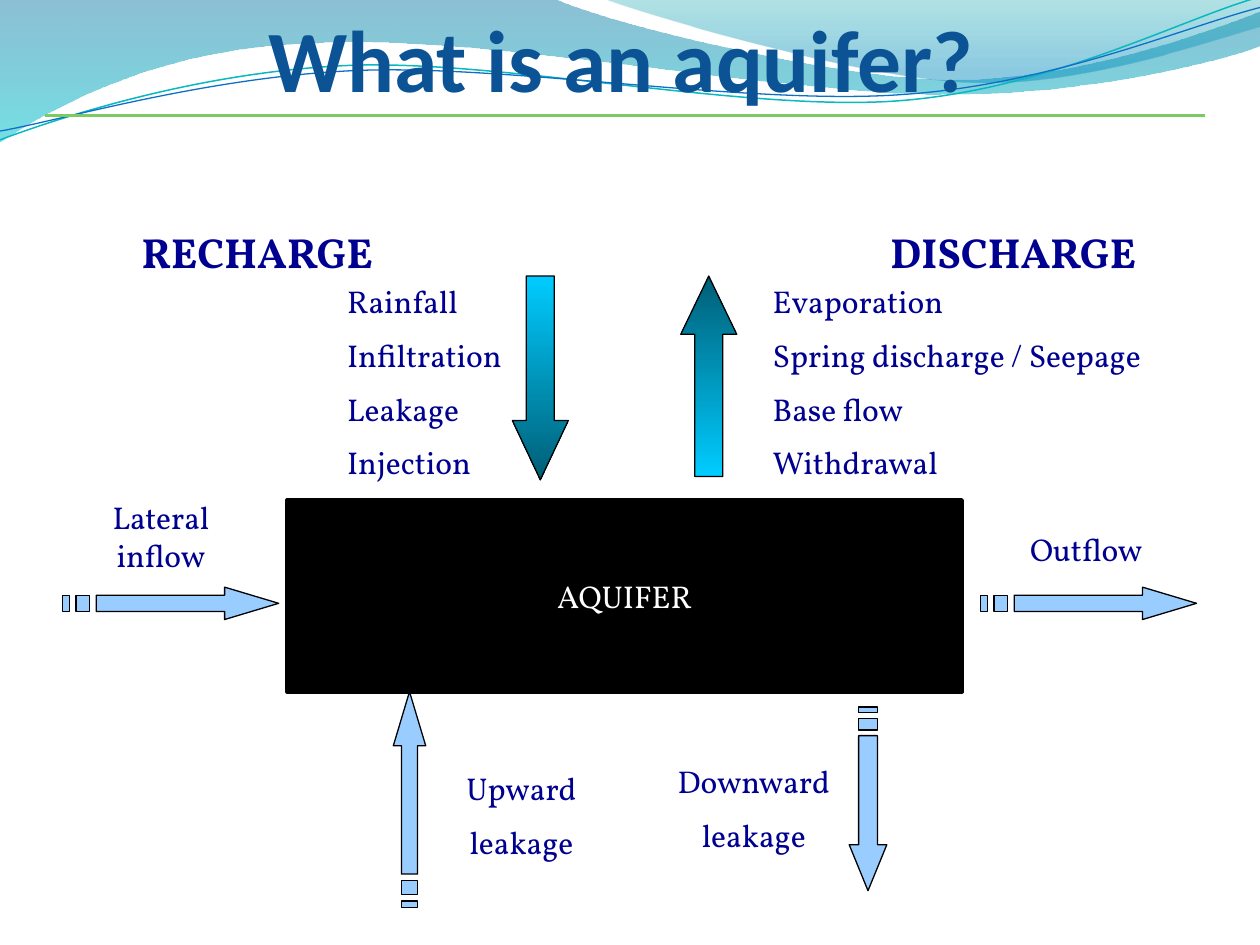
from math import cos, radians, sin

from lxml import etree
from pptx import Presentation
from pptx.dml.color import RGBColor
from pptx.enum.shapes import MSO_CONNECTOR, MSO_SHAPE
from pptx.enum.text import MSO_ANCHOR, PP_ALIGN
from pptx.oxml.ns import qn
from pptx.util import Pt

LEFT, CENTER = PP_ALIGN.LEFT, PP_ALIGN.CENTER
MIDDLE = MSO_ANCHOR.MIDDLE
RECTANGLE = MSO_SHAPE.RECTANGLE
DOWN_ARROW, UP_ARROW = MSO_SHAPE.DOWN_ARROW, MSO_SHAPE.UP_ARROW
STRAIGHT = MSO_CONNECTOR.STRAIGHT

BLACK = RGBColor(0x00, 0x00, 0x00)
WHITE = RGBColor(0xFF, 0xFF, 0xFF)
TITLE_BLUE = RGBColor(0x0B, 0x53, 0x94)
NAVY = RGBColor(0x00, 0x00, 0x90)
RULE_GREEN = RGBColor(0x7C, 0xCA, 0x62)
PALE_BLUE = RGBColor(0x99, 0xCC, 0xFF)
BRIGHT_CYAN = RGBColor(0x00, 0xCC, 0xFF)
DEEP_TEAL = RGBColor(0x00, 0x5E, 0x76)
WAVE_BLUE = RGBColor(0x00, 0x74, 0xA1)
WAVE_CYAN = RGBColor(0x00, 0xC6, 0xCF)
CREST_TEAL = RGBColor(0x00, 0xA1, 0xA9)
CREST_BLUE = RGBColor(0x00, 0x8B, 0xBF)
STRAND_TEAL = RGBColor(0x0A, 0xB8, 0xBF)
STRAND_BLUE = RGBColor(0x0F, 0x6F, 0xC6)

TITLE_FONT, BODY_FONT = "Calibri", "Vollkorn"
STRAND_TILT = -2.7

# Each outline is a start point, then lines (x, y) or Bezier curves (6 numbers).
BROAD_WAVE = [
    (0, 0), (316.8, -0.7),
    (342.7, 12.2, 478.1, 45.4, 545.8, 45.4),
    (614.2, 45.4, 689.8, 18.7, 720, 6.5),
    (720.7, 25.9),
    (707.8, 31.7, 626.4, 54.7, 537.1, 54),
    (447.8, 54, 275, 20.2, 185, 24.5),
    (92.9, 25.9, 33.1, 59.8, -0.7, 81.4),
]
CREST_WAVE = [
    (344.9, -0.7),
    (366.5, 7.9, 491, 44.6, 553.7, 46.8),
    (616.3, 49.7, 691.9, 23, 720, 15.1),
    (720, 0),
]
TEAL_STRAND = [
    (0, 79.9),
    (34.6, 67, 113.8, 41, 199.4, 37.4),
    (284.4, 33.8, 427, 64.1, 513.4, 57.6),
    (599.8, 51.1, 675.4, 10.8, 718.6, -1.4),
]
BLUE_STRAND = [
    (0, 74.9),
    (33.8, 69.1, 118.1, 43.9, 203.8, 40.3),
    (290.2, 36.7, 429.8, 60.5, 516.2, 54),
    (601.9, 48.2, 677.5, 15.1, 720, 4.3),
]


def pairs(numbers):
    return list(zip(numbers[::2], numbers[1::2]))


def add_outline(slide, contours, closed=True):
    contours = [[(Pt(x), Pt(y)) for x, y in contour] for contour in contours]
    builder = slide.shapes.build_freeform(*contours[0][0])
    builder.add_line_segments(contours[0][1:], close=closed)
    for contour in contours[1:]:
        builder.move_to(*contour[0])
        builder.add_line_segments(contour[1:], close=closed)
    outline = builder.convert_to_shape()
    outline.shadow.inherit = False
    return outline


def add_curved_outline(slide, segments, closed=True):
    """Draw the points as lines, then merge each curve's three lines into a Bezier."""
    points = [point for segment in segments for point in pairs(segment)]
    outline = add_outline(slide, [points], closed)
    lines = iter(list(outline.element.spPr.iter(qn("a:lnTo"))))
    for segment in segments[1:]:
        first = next(lines)
        if len(segment) == 6:
            first.tag = qn("a:cubicBezTo")
            for line in (next(lines), next(lines)):
                first.append(line[0])
                line.getparent().remove(line)
    return outline


def set_line(shape, color, width):
    shape.line.color.rgb = color
    shape.line.width = Pt(width)


def set_solid(shape, fill, line, line_width):
    shape.fill.solid()
    shape.fill.fore_color.rgb = fill
    set_line(shape, line, line_width)


def set_gradient(shape, top, bottom, end=1.0):
    shape.fill.gradient()
    shape.fill.gradient_angle = 270
    for stop, color, position in zip(shape.fill.gradient_stops, (top, bottom), (0, end)):
        stop.color.rgb = color
        stop.position = position


def add_wave(slide, segments, top, bottom, opacities, end=1.0):
    wave = add_curved_outline(slide, segments)
    set_gradient(wave, top, bottom, end)
    for color, opacity in zip(wave.element.spPr.iter(qn("a:srgbClr")), opacities):
        etree.SubElement(color, qn("a:alpha")).set("val", str(opacity * 1000))
    wave.line.fill.background()


def add_strand(slide, segments, center, color, width):
    """Level the curve about its center, then tilt the shape back."""
    c, s = cos(radians(STRAND_TILT)), sin(radians(STRAND_TILT))
    level = []
    for segment in segments:
        offsets = [(x - center[0], y - center[1]) for x, y in pairs(segment)]
        level.append([value for dx, dy in offsets
                      for value in (center[0] + dx * c + dy * s,
                                    center[1] - dx * s + dy * c)])
    strand = add_curved_outline(slide, level, closed=False)
    strand.rotation = STRAND_TILT
    strand.fill.background()
    set_line(strand, color, width)


def write(frame, lines, size, color, align=LEFT, font=BODY_FONT, bold=False):
    for index, line in enumerate(lines):
        paragraph = frame.add_paragraph() if index else frame.paragraphs[0]
        paragraph.text = line
        paragraph.alignment = align
        paragraph.space_before = Pt(size * 0.51 if index else 0)
        paragraph.font.name = font
        paragraph.font.size = Pt(size)
        paragraph.font.bold = bold
        paragraph.font.color.rgb = color


def add_label(slide, box, lines, size=18, color=NAVY, align=CENTER, **style):
    frame = slide.shapes.add_textbox(*map(Pt, box)).text_frame
    frame.word_wrap = True
    write(frame, lines, size, color, align, **style)
    return frame


def add_rule(slide, left, right, y):
    rule = slide.shapes.add_connector(STRAIGHT, Pt(left), Pt(y), Pt(right), Pt(y))
    set_line(rule, RULE_GREEN, 1.5)
    etree.SubElement(rule.element.spPr, qn("a:effectLst"))


def add_block_arrow(slide, kind, box, head, top, bottom):
    arrow = slide.shapes.add_shape(kind, *map(Pt, box))
    arrow.shadow.inherit = False
    arrow.adjustments[1] = head
    set_gradient(arrow, top, bottom)
    set_line(arrow, BLACK, 0.75)


def add_striped_arrow(slide, center, length, width, rotation=0):
    """Right-pointing arrow with two stripes at its tail, turned about its center."""
    left, top = center[0] - length / 2, center[1] - width / 2
    contours = [[(0.75, 0), (0.75, 0.25), (5 / 32, 0.25), (5 / 32, 0.75),
                 (0.75, 0.75), (0.75, 1), (1, 0.5)]]
    for start, end in ((1 / 16, 1 / 8), (0, 1 / 32)):
        contours.append([(start, 0.25), (start, 0.75), (end, 0.75), (end, 0.25)])
    arrow = add_outline(slide, [[(left + x * length, top + y * width) for x, y in contour]
                                for contour in contours])
    set_solid(arrow, PALE_BLUE, BLACK, 0.75)
    arrow.rotation = rotation


def add_aquifer(slide):
    aquifer = slide.shapes.add_shape(RECTANGLE, Pt(164.25), Pt(285.75), Pt(385.5), Pt(109.5))
    aquifer.shadow.inherit = False
    set_solid(aquifer, BLACK, BLACK, 2.25)
    aquifer.text_frame.word_wrap = False
    aquifer.text_frame.vertical_anchor = MIDDLE
    write(aquifer.text_frame, ["AQUIFER"], 18, WHITE, CENTER)


def main():
    deck = Presentation()
    deck.slide_width, deck.slide_height = Pt(720), Pt(540)
    slide = deck.slides.add_slide(deck.slide_layouts[6])

    add_wave(slide, BROAD_WAVE, WAVE_BLUE, WAVE_CYAN, (45, 55))
    add_wave(slide, CREST_WAVE, CREST_TEAL, CREST_BLUE, (30, 45), end=0.8)
    add_strand(slide, TEAL_STRAND, (359.3, 41.4), STRAND_TEAL, 0.85)
    add_strand(slide, BLUE_STRAND, (359.6, 42.5), STRAND_BLUE, 0.75)

    title = add_label(slide, (31, 0, 648, 66), ["What is an aquifer?"], 50, TITLE_BLUE,
                      font=TITLE_FONT, bold=True)
    title.vertical_anchor = MIDDLE
    add_rule(slide, 25.5, 688.75, 66)

    add_aquifer(slide)
    add_label(slide, (191.25, 157.5, 107.5, 127.5),
              ["Rainfall", "Infiltration", "Leakage", "Injection"], align=LEFT)
    add_label(slide, (434.5, 157.5, 268, 127.5),
              ["Evaporation", "Spring discharge / Seepage", "Base flow", "Withdrawal"],
              align=LEFT)
    add_block_arrow(slide, DOWN_ARROW, (292.75, 157.75, 32, 116.5), 1.06,
                    BRIGHT_CYAN, DEEP_TEAL)
    add_block_arrow(slide, UP_ARROW, (389, 157.75, 32, 114.5), 1.04, DEEP_TEAL, BRIGHT_CYAN)

    add_label(slide, (41.25, 281, 101.5, 52), ["Lateral inflow"])
    add_label(slide, (566, 299.5, 109.5, 29), ["Outflow"])
    add_label(slide, (239.25, 436, 117.5, 62), ["Upward", "leakage"])
    add_label(slide, (372, 432, 117.5, 62), ["Downward", "leakage"])
    add_striped_arrow(slide, (97.5, 344.75), 123.5, 18.5)
    add_striped_arrow(slide, (622, 344.75), 123.5, 18.5)
    add_striped_arrow(slide, (496, 456.5), 105, 21.5, rotation=90)
    add_striped_arrow(slide, (234, 457), 123.5, 18.5, rotation=270)

    add_label(slide, (72, 126, 150, 36), ["RECHARGE"], 24, bold=True)
    add_label(slide, (498, 126, 162, 36), ["DISCHARGE"], 24, bold=True)

    deck.save("out.pptx")


if __name__ == "__main__":
    main()
